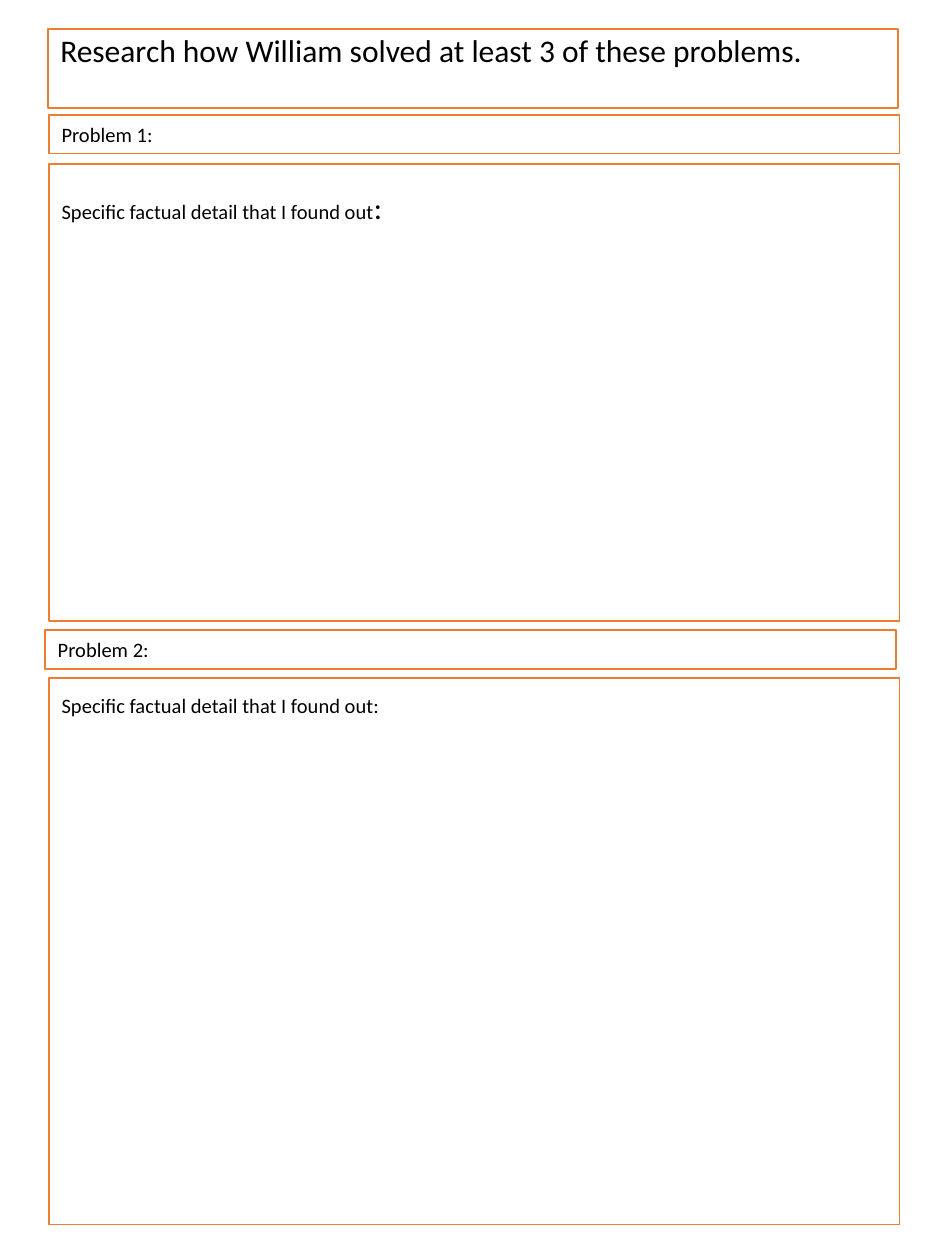
from pptx import Presentation
from pptx.dml.color import RGBColor
from pptx.enum.shapes import MSO_SHAPE
from pptx.enum.text import MSO_ANCHOR, PP_ALIGN
from pptx.util import Inches, Pt

BLACK = RGBColor(0x00, 0x00, 0x00)
WHITE = RGBColor(0xFF, 0xFF, 0xFF)
ORANGE = RGBColor(0xED, 0x7D, 0x31)
FONT = "Calibri"
BOX_WIDTH = 6.75
TITLE_SIZE, BODY_SIZE, COLON_SIZE = 18, 11.7, 17.6
DETAIL = "Specific factual detail that I found out"

# left, top, height, space above the text (None centres it), line spacing, runs
BOXES = [
    (0.38, 0.23, 0.63, 0.05, 0.9,
     [("Research how William solved at least 3 of these problems.", TITLE_SIZE)]),
    (0.39, 0.91, 0.31, None, 1.0, [("Problem 1:", BODY_SIZE)]),
    (0.39, 1.3, 3.63, 0.2, 1.0, [(DETAIL, BODY_SIZE), (":", COLON_SIZE)]),
    (0.36, 5, 0.31, None, 1.0, [("Problem 2:", BODY_SIZE)]),
    (0.39, 5.38, 4.34, 0.12, 1.0, [(DETAIL + ":", BODY_SIZE)]),
]


def add_box(s, left, top, height, space_above, line_spacing, runs):
    box = s.shapes.add_shape(MSO_SHAPE.RECTANGLE, Inches(left), Inches(top),
                             Inches(BOX_WIDTH), Inches(height))
    box.shadow.inherit = False
    box.fill.solid()
    box.fill.fore_color.rgb = WHITE
    box.line.color.rgb = ORANGE
    box.line.width = Pt(1)

    tf = box.text_frame
    tf.word_wrap = True
    tf.vertical_anchor = MSO_ANCHOR.MIDDLE
    if space_above is not None:
        tf.vertical_anchor = MSO_ANCHOR.TOP
        tf.margin_top = Inches(space_above)

    p = tf.paragraphs[0]
    p.alignment = PP_ALIGN.LEFT
    p.line_spacing = line_spacing
    for text, size in runs:
        r = p.add_run()
        r.text = text
        r.font.color.rgb = BLACK
        for name, value in {"name": FONT, "size": Pt(size)}.items():
            setattr(r.font, name, value)


def main():
    prs = Presentation()
    prs.slide_width, prs.slide_height = Inches(7.5), Inches(10)
    s = prs.slides.add_slide(prs.slide_layouts[6])
    for box in BOXES:
        add_box(s, *box)
    prs.save("out.pptx")


if __name__ == "__main__":
    main()
